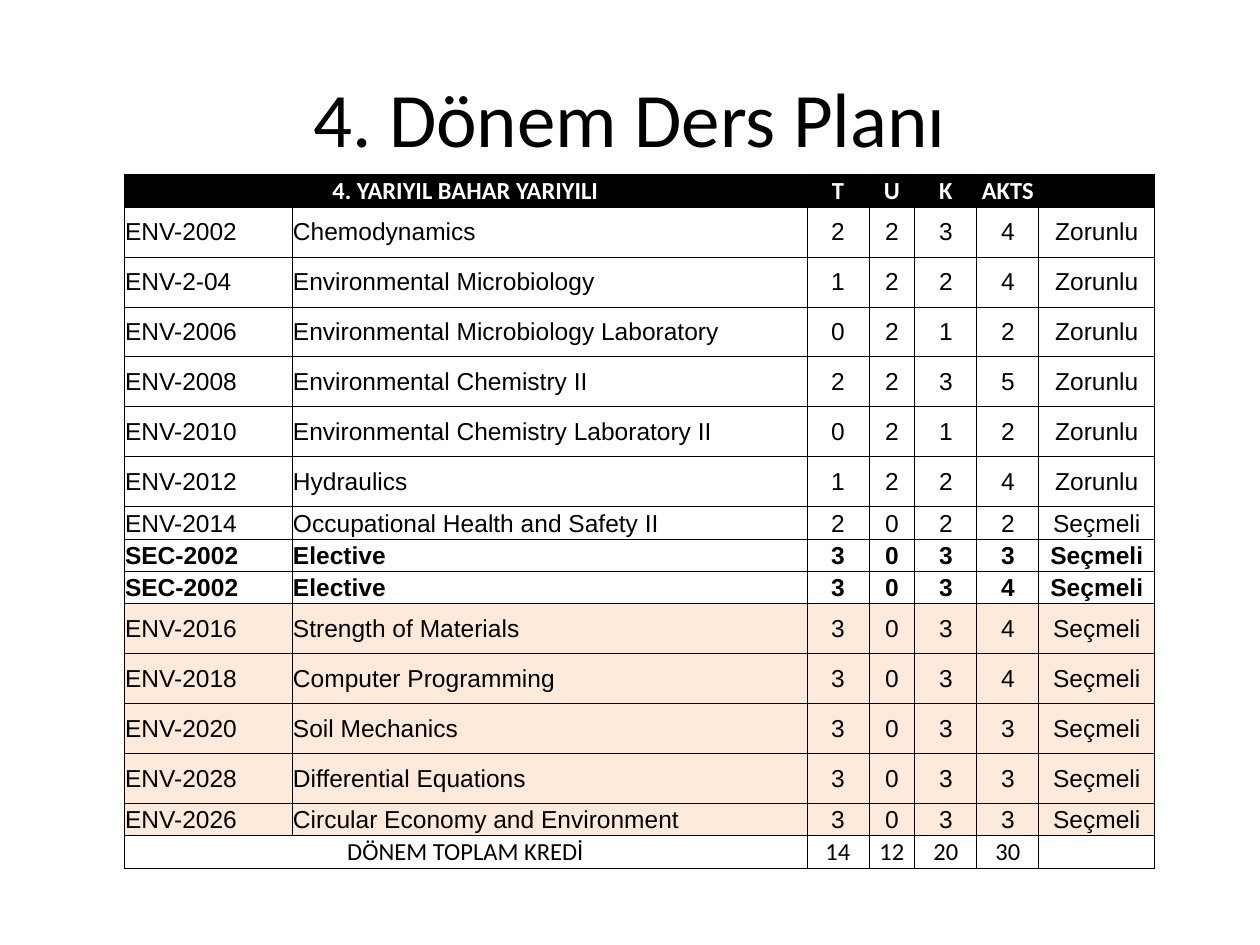
from lxml import etree
from pptx import Presentation
from pptx.dml.color import RGBColor
from pptx.enum.text import MSO_ANCHOR, PP_ALIGN
from pptx.oxml.ns import qn
from pptx.util import Pt

PX = 914400 / 126
MIDDLE = MSO_ANCHOR.MIDDLE
LEFT, CENTER = PP_ALIGN.LEFT, PP_ALIGN.CENTER
BLACK, WHITE, PEACH = "000000", "FFFFFF", "FDEADA"


def px(n):
    return round(n * PX)


def rgb(color):
    return RGBColor.from_string(color)


prs = Presentation()
prs.slide_width, prs.slide_height = px(1260), px(945)
s = prs.slides.add_slide(prs.slide_layouts[6])

# Title
sp = s.shapes.add_textbox(px(63), px(38), px(1134), px(157))
tf = sp.text_frame
tf.word_wrap = True
tf.vertical_anchor = MIDDLE
p = tf.paragraphs[0]
p.text = "4. Dönem Ders Planı"
p.alignment = CENTER
font = p.runs[0].font
font.name, font.size, font.color.rgb = "Calibri", Pt(44), rgb(BLACK)

# Course data: code, name, T, U, K, AKTS, type
rows = [
    ("4. YARIYIL BAHAR YARIYILI", "", "T", "U", "K", "AKTS", ""),
    ("ENV-2002", "Chemodynamics", 2, 2, 3, 4, "Zorunlu"),
    ("ENV-2-04", "Environmental Microbiology", 1, 2, 2, 4, "Zorunlu"),
    ("ENV-2006", "Environmental Microbiology Laboratory", 0, 2, 1, 2, "Zorunlu"),
    ("ENV-2008", "Environmental Chemistry II", 2, 2, 3, 5, "Zorunlu"),
    ("ENV-2010", "Environmental Chemistry Laboratory II", 0, 2, 1, 2, "Zorunlu"),
    ("ENV-2012", "Hydraulics", 1, 2, 2, 4, "Zorunlu"),
    ("ENV-2014", "Occupational Health and Safety II", 2, 0, 2, 2, "Seçmeli"),
    ("SEC-2002", "Elective", 3, 0, 3, 3, "Seçmeli"),
    ("SEC-2002", "Elective", 3, 0, 3, 4, "Seçmeli"),
    ("ENV-2016", "Strength of Materials", 3, 0, 3, 4, "Seçmeli"),
    ("ENV-2018", "Computer Programming", 3, 0, 3, 4, "Seçmeli"),
    ("ENV-2020", "Soil Mechanics", 3, 0, 3, 3, "Seçmeli"),
    ("ENV-2028", "Differential Equations", 3, 0, 3, 3, "Seçmeli"),
    ("ENV-2026", "Circular Economy and Environment", 3, 0, 3, 3, "Seçmeli"),
    ("DÖNEM TOPLAM KREDİ", "", 14, 12, 20, 30, ""),
]
col_widths = [168, 515, 62, 46, 62, 62, 116]
row_heights = [33] + [50] * 6 + [33, 32, 32] + [50] * 4 + [32, 33]
last = len(rows) - 1

# Table grid
frame = s.shapes.add_table(len(rows), len(col_widths), px(124), px(174),
                           px(sum(col_widths)), px(sum(row_heights)))
table = frame.table
table.first_row = table.horz_banding = False
for col, width in zip(table.columns, col_widths):
    col.width = px(width)
for row, height in zip(table.rows, row_heights):
    row.height = px(height)

# Cells
for i, row in enumerate(rows):
    header, summary = i == 0, i in (0, last)
    elective = row[0].startswith("SEC")
    for j, value in enumerate(row):
        cell = table.cell(i, j)
        cell.vertical_anchor = MIDDLE
        cell.margin_left = cell.margin_right = cell.margin_top = px(1)
        cell.margin_bottom = 0
        p = cell.text_frame.paragraphs[0]
        p.text = str(value)
        p.alignment = CENTER if summary or j > 1 else LEFT
        for r in p.runs:
            r.font.name = "Calibri" if summary else "Arial"
            r.font.size = Pt(14)
            r.font.bold = header or elective
            r.font.color.rgb = rgb(WHITE if header else BLACK)
        # Keeps empty cells from stretching their row
        etree.SubElement(p._p, qn("a:endParaRPr"), sz="1400")

        # Borders come before the fill in the cell properties
        tcPr = cell._tc.get_or_add_tcPr()
        for side in ("lnL", "lnR", "lnT", "lnB"):
            ln = etree.SubElement(tcPr, qn("a:" + side), w=str(Pt(0.5)))
            fill = etree.SubElement(ln, qn("a:solidFill"))
            etree.SubElement(fill, qn("a:srgbClr"), val=BLACK)
        if header or 10 <= i < last:
            cell.fill.solid()
            cell.fill.fore_color.rgb = rgb(BLACK if header else PEACH)
        else:
            cell.fill.background()

# Header and total labels span the code and name columns
for i in (0, last):
    table.cell(i, 0).merge(table.cell(i, 1))

prs.save("out.pptx")
